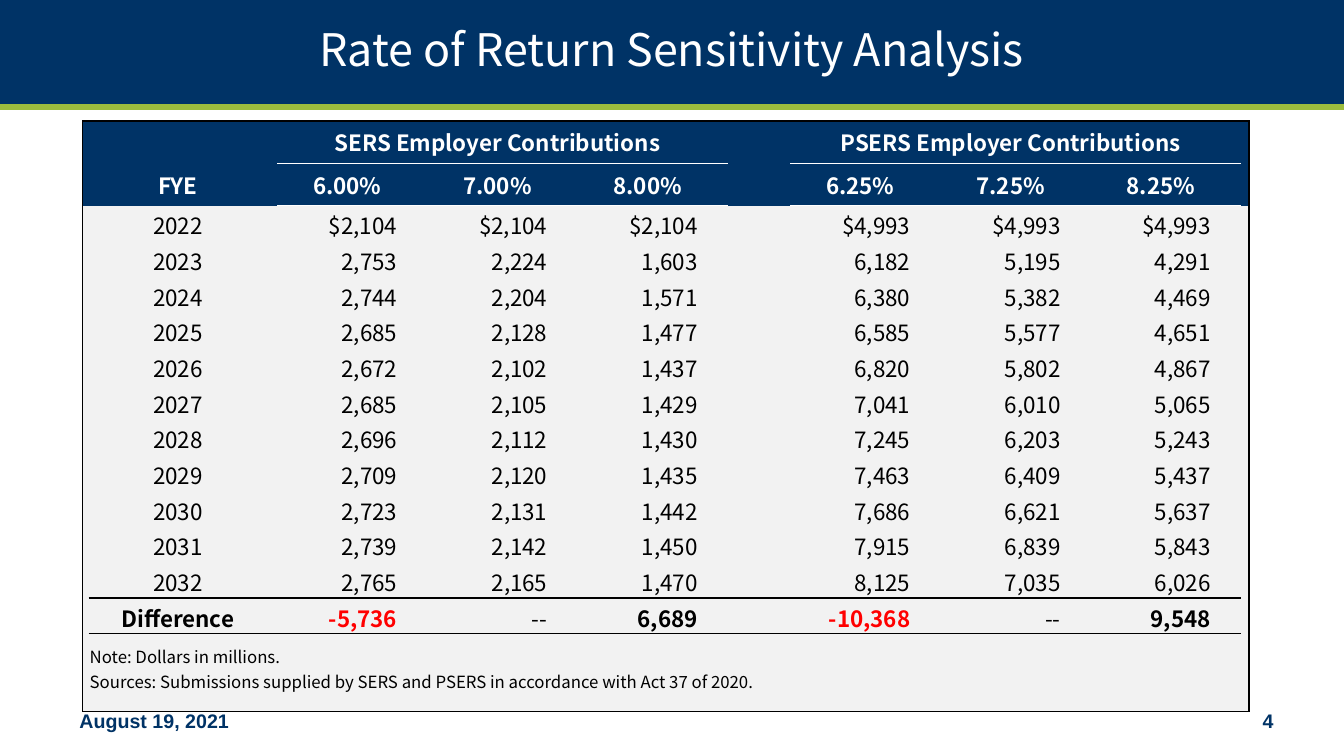
from lxml.etree import SubElement
from pptx import Presentation
from pptx.dml.color import RGBColor
from pptx.enum.shapes import MSO_CONNECTOR as Connector, MSO_SHAPE as Shape
from pptx.enum.text import MSO_ANCHOR as Anchor, PP_ALIGN as Align
from pptx.oxml.ns import qn
from pptx.util import Inches, Pt

WIDTH, HEIGHT = 13.33, 7.5
COLORS = {"navy": "003366", "green": "9CBC3D", "white": "FFFFFF",
          "black": "000000", "red": "FF0000", "panel": "F2F2F2"}
TITLE_FONT, TABLE_FONT, FOOTER_FONT = "Noto Sans CJK JP", "Noto Sans CJK SC", "Arial"
NO_GRID_STYLE = "{2D5ABB26-0587-4C30-8999-92F81FD0307C}"

GROUPS = {2: "SERS Employer Contributions", 6: "PSERS Employer Contributions"}
RATES = ["FYE", "6.00%", "7.00%", "8.00%", "6.25%", "7.25%", "8.25%"]
CONTRIBUTIONS = [
    ["2022", "$2,104", "$2,104", "$2,104", "$4,993", "$4,993", "$4,993"],
    ["2023", "2,753", "2,224", "1,603", "6,182", "5,195", "4,291"],
    ["2024", "2,744", "2,204", "1,571", "6,380", "5,382", "4,469"],
    ["2025", "2,685", "2,128", "1,477", "6,585", "5,577", "4,651"],
    ["2026", "2,672", "2,102", "1,437", "6,820", "5,802", "4,867"],
    ["2027", "2,685", "2,105", "1,429", "7,041", "6,010", "5,065"],
    ["2028", "2,696", "2,112", "1,430", "7,245", "6,203", "5,243"],
    ["2029", "2,709", "2,120", "1,435", "7,463", "6,409", "5,437"],
    ["2030", "2,723", "2,131", "1,442", "7,686", "6,621", "5,637"],
    ["2031", "2,739", "2,142", "1,450", "7,915", "6,839", "5,843"],
    ["2032", "2,765", "2,165", "1,470", "8,125", "7,035", "6,026"],
    ["Difference", "-5,736", "--", "6,689", "-10,368", "--", "9,548"],
]
NOTES = ["Note: Dollars in millions.",
         "Sources: Submissions supplied by SERS and PSERS in accordance with Act 37 of 2020."]

DATA_COLUMNS = [1, 2, 3, 4, 6, 7, 8]
COLUMN_WIDTHS = [0.06, 1.87] + [1.49] * 3 + [0.62] + [1.49] * 3 + [0.08]
BODY_HEIGHT = 4.25
ROW_HEIGHTS = ([0.42] * 2 + [BODY_HEIGHT / len(CONTRIBUTIONS)] * len(CONTRIBUTIONS)
               + [0.09, 0.25, 0.25, 0.18])
FIRST_BODY = 2
DIFFERENCE = FIRST_BODY + len(CONTRIBUTIONS) - 1
FIRST_NOTE = DIFFERENCE + 2
LAST_ROW, LAST_COLUMN = len(ROW_HEIGHTS) - 1, len(COLUMN_WIDTHS) - 1


def color(name):
    return RGBColor.from_string(COLORS[name])


def set_font(para, face, size, tint, bold=False):
    font = para.font
    font.name, font.size, font.bold = face, Pt(size), bold
    font.color.rgb = color(tint)


def add_header(page, box):
    left, top, width, height = box
    band = page.shapes.add_shape(Shape.RECTANGLE, *map(Inches, box))
    band.shadow.inherit = False
    band.fill.solid()
    band.fill.fore_color.rgb = color("navy")
    band.line.fill.background()

    rule_y = Inches(top + height + 0.03)
    rule = page.shapes.add_connector(Connector.STRAIGHT, Inches(left), rule_y,
                                     Inches(left + width), rule_y)
    rule.line.color.rgb = color("green")
    rule.line.width = Pt(4.25)
    SubElement(rule._element.spPr, qn("a:effectLst"))

    title = page.shapes.title
    title._element.addprevious(band._element)
    title._element.addprevious(rule._element)
    margin = 0.92
    title.left, title.top = Inches(left + margin), Inches(top - 0.1)
    title.width, title.height = Inches(width - 2 * margin), Inches(height + 0.21)
    title.text_frame.vertical_anchor = Anchor.MIDDLE
    title.text_frame.text = "Rate of Return Sensitivity Analysis"
    para = title.text_frame.paragraphs[0]
    para.alignment, para.line_spacing = Align.CENTER, 0.9
    set_font(para, TITLE_FONT, 32, "white")


def add_footer(page, box):
    left, top, width, height = box
    part_width = 3
    for text, offset, alignment in [("August 19, 2021", 0, Align.LEFT),
                                    ("4", width - part_width, Align.RIGHT)]:
        label = page.shapes.add_textbox(Inches(left + offset), Inches(top),
                                        Inches(part_width), Inches(height))
        frame = label.text_frame
        frame.word_wrap, frame.vertical_anchor = True, Anchor.MIDDLE
        frame.text = text
        para = frame.paragraphs[0]
        para.alignment = alignment
        set_font(para, FOOTER_FONT, 14, "navy", True)


def cell_borders(row, column):
    """Return the border colours of a cell, in the order the schema asks for."""
    in_group = column in (2, 3, 4, 6, 7, 8)
    inside = 0 < column < LAST_COLUMN
    rules = [
        ("lnL", "black", column == 0),
        ("lnR", "black", column == LAST_COLUMN),
        ("lnT", "black", row == 0 or (row == DIFFERENCE and inside)),
        ("lnT", "white", row == 1 and in_group),
        ("lnB", "black", row == LAST_ROW or (row == DIFFERENCE - 1 and inside)),
        ("lnB", "white", row == 0 and in_group),
    ]
    return [(side, tint) for side, tint, applies in rules if applies]


def format_cell(cell, row, column):
    properties = cell._tc.get_or_add_tcPr()
    for side, tint in cell_borders(row, column):
        line = SubElement(properties, qn(f"a:{side}"), w=str(Pt(1)))
        SubElement(SubElement(line, qn("a:solidFill")), qn("a:srgbClr"), val=COLORS[tint])
    cell.fill.solid()
    cell.fill.fore_color.rgb = color("navy" if row < FIRST_BODY else "panel")


def set_margins(cell, left, top, right, bottom):
    cell.margin_left, cell.margin_top = Inches(left), Inches(top)
    cell.margin_right, cell.margin_bottom = Inches(right), Inches(bottom)


def write_cell(cell, text, margins, alignment, size, tint, bold, anchor=Anchor.BOTTOM):
    cell.text = text
    cell.vertical_anchor = anchor
    set_margins(cell, *margins)
    para = cell.text_frame.paragraphs[0]
    para.alignment = alignment
    set_font(para, TABLE_FONT, size, tint, bold)


def shrink_empty(cell):
    """Keep an empty cell from stretching its row."""
    set_margins(cell, 0, 0, 0, 0)
    SubElement(cell.text_frame.paragraphs[0]._p, qn("a:endParaRPr"), sz="100")


def write_headings(table):
    for column, text in GROUPS.items():
        table.cell(0, column).merge(table.cell(0, column + 2))
        write_cell(table.cell(0, column), text, (0.1, 0.05, 0.2, 0.05),
                   Align.CENTER, 16, "white", True)
    for column, text in zip(DATA_COLUMNS, RATES):
        margins = (0, 0.05, 0.1, 0.05) if column == 1 else (0.1, 0.05, 0.2, 0.05)
        write_cell(table.cell(1, column), text, margins, Align.CENTER, 16, "white", True)


def write_contributions(table):
    for row, values in enumerate(CONTRIBUTIONS, FIRST_BODY):
        for column, text in zip(DATA_COLUMNS, values):
            is_label = column == 1
            write_cell(table.cell(row, column), text,
                       (0, 0, 0.1 if is_label else 0.3, 0),
                       Align.CENTER if is_label else Align.RIGHT, 16,
                       "red" if text[0] == "-" and text != "--" else "black",
                       row == DIFFERENCE and text != "--")


def write_notes(table):
    for row in range(FIRST_NOTE, LAST_ROW + 1):
        table.cell(row, 1).merge(table.cell(row, LAST_COLUMN - 1))
    for row, text in enumerate(NOTES, FIRST_NOTE):
        write_cell(table.cell(row, 1), text, (0.01, 0.01, 0.01, 0),
                   Align.LEFT, 12, "black", False, Anchor.TOP)


def add_contribution_table(page, left, top):
    frame = page.shapes.add_table(
        len(ROW_HEIGHTS), len(COLUMN_WIDTHS), Inches(left), Inches(top),
        Inches(sum(COLUMN_WIDTHS)), Inches(sum(ROW_HEIGHTS)))
    table = frame.table
    table.first_row = table.horz_banding = False
    table._tbl.tblPr.find(qn("a:tableStyleId")).text = NO_GRID_STYLE
    for column, width in zip(table.columns, COLUMN_WIDTHS):
        column.width = Inches(width)
    for row, height in zip(table.rows, ROW_HEIGHTS):
        row.height = Inches(height)

    write_headings(table)
    write_contributions(table)
    write_notes(table)
    for row in range(LAST_ROW + 1):
        for column in range(LAST_COLUMN + 1):
            cell = table.cell(row, column)
            format_cell(cell, row, column)
            if not cell.text:
                shrink_empty(cell)


def main():
    deck = Presentation()
    deck.slide_width, deck.slide_height = Inches(WIDTH), Inches(HEIGHT)
    page = deck.slides.add_slide(deck.slide_layouts.get_by_name("Title Only"))
    add_header(page, (0, -0.01, WIDTH, 1.04))
    add_footer(page, (0.69, 6.95, 12.04, 0.4))
    add_contribution_table(page, 0.82, 1.2)
    deck.save("out.pptx")


if __name__ == "__main__":
    main()
